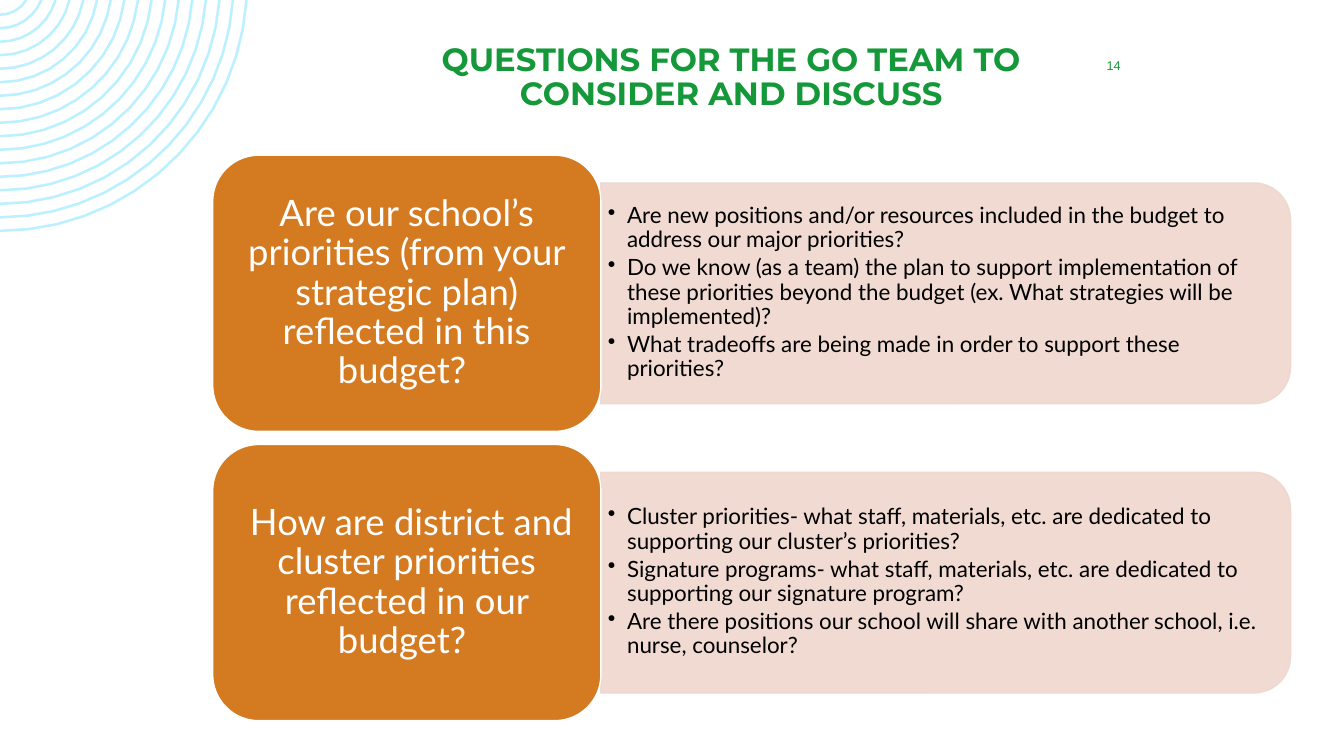
from math import asin, ceil, cos, pi, sin, sqrt

from lxml.etree import SubElement
from pptx import Presentation
from pptx.dml.color import RGBColor
from pptx.enum.shapes import MSO_SHAPE
from pptx.enum.text import MSO_ANCHOR, PP_ALIGN
from pptx.oxml.ns import qn
from pptx.util import Inches, Pt

GREEN, ORANGE, PEACH, SKY = "159839", "D47B22", "EFD7CD", "BBF0FF"
BLACK, WHITE = "000000", "FFFFFF"

SECTIONS = [
    ("Are our school’s priorities (from your strategic plan) reflected in this budget? ", [
        "Are new positions and/or resources included in the budget to address our major priorities?",
        "Do we know (as a team) the plan to support implementation of these priorities beyond "
        "the budget (ex. What strategies will be implemented)?",
        "What tradeoffs are being made in order to support these priorities?",
    ]),
    (" How are district and cluster priorities reflected in our budget? ", [
        "Cluster priorities- what staff, materials, etc. are dedicated to supporting our "
        "cluster’s priorities?",
        "Signature programs- what staff, materials, etc. are dedicated to supporting our "
        "signature program?",
        "Are there positions our school will share with another school, i.e. nurse, counselor?",
    ]),
]


def color(value):
    return RGBColor.from_string(value)


def paint(shape, fill, line, line_width=1):
    shape.shadow.inherit = False
    if fill:
        shape.fill.solid()
        shape.fill.fore_color.rgb = color(fill)
    else:
        shape.fill.background()
    shape.line.color.rgb = color(line)
    shape.line.width = Pt(line_width)


def make_translucent(shape, percent):
    for tint in shape.element.spPr.iter(qn("a:srgbClr")):
        SubElement(tint, qn("a:alpha"), val=str(percent * 1000))


def write(box, lines, font, size, text_color, align=PP_ALIGN.CENTER, anchor=MSO_ANCHOR.MIDDLE,
          spacing=0.9, bold=False):
    frame = box.text_frame
    frame.word_wrap = True
    frame.vertical_anchor = anchor
    for index, line in enumerate(lines):
        para = frame.paragraphs[0] if index == 0 else frame.add_paragraph()
        para.text = line
        para.alignment = align
        para.line_spacing = spacing
        para.font.name = font
        para.font.size = Pt(size)
        para.font.bold = bold
        para.font.color.rgb = color(text_color)


def add_text_box(page, left, top, width, height):
    return page.shapes.add_textbox(Inches(left), Inches(top), Inches(width), Inches(height))


def add_bullets(box):
    for para in box.text_frame.paragraphs:
        para.space_after = Pt(2.9)
        properties = para._p.get_or_add_pPr()
        properties.set("marL", str(Inches(0.19)))
        properties.set("indent", str(-Inches(0.19)))
        SubElement(properties, qn("a:buChar"), char="•")


def add_rings(page, count=17, outer=2.45, step=0.134, rise=0.16):
    """Draw concentric arcs centred above the top left corner, cut off at the page edges."""
    def arc(radius):
        steps = ceil(8 * sqrt(radius))
        start = asin(rise / radius)
        angles = [start + (pi / 2 - start) * i / steps for i in range(steps + 1)]
        return [(Inches(radius * cos(a)), Inches(radius * sin(a) - rise)) for a in angles]

    arcs = [arc(outer - ring * step) for ring in range(count)]
    builder = page.shapes.build_freeform(*arcs[0][0])
    builder.add_line_segments(arcs[0][1:], close=False)
    for first, *others in arcs[1:]:
        builder.move_to(*first)
        builder.add_line_segments(others, close=False)
    paint(builder.convert_to_shape(), None, SKY, 1.8)


def add_section(page, top, question, details):
    width, height = 6.84, 2.19
    # The panel is turned a quarter, so its unturned frame shares only its centre.
    center_x, center_y = 9.38, top + 1.37
    panel = page.shapes.add_shape(
        MSO_SHAPE.ROUND_2_SAME_RECTANGLE, Inches(center_x - height / 2),
        Inches(center_y - width / 2), Inches(height), Inches(width))
    panel.rotation = 90
    paint(panel, PEACH, PEACH)
    make_translucent(panel, 90)

    box = add_text_box(page, 5.96, top + 0.38, 6.74, 1.97)
    frame = box.text_frame
    frame.margin_left = frame.margin_right = Inches(0.07)
    frame.margin_top = frame.margin_bottom = Inches(0.03)
    write(box, details, "Lato", 16, BLACK, align=PP_ALIGN.LEFT)
    add_bullets(box)

    card = page.shapes.add_shape(
        MSO_SHAPE.ROUNDED_RECTANGLE, Inches(2.11), Inches(top), Inches(3.85), Inches(2.74))
    paint(card, ORANGE, WHITE)
    card.text_frame.margin_left = card.text_frame.margin_right = Inches(0.11)
    write(card, [question], "Lato", 26, WHITE)


def main():
    deck = Presentation()
    deck.slide_width, deck.slide_height = Inches(13.33), Inches(7.5)
    page = deck.slides.add_slide(deck.slide_layouts[6])
    add_rings(page)
    write(add_text_box(page, 3.47, 0.38, 7.57, 0.84),
          ["QUESTIONS FOR THE GO TEAM TO CONSIDER AND DISCUSS"],
          "Montserrat", 23, GREEN, anchor=MSO_ANCHOR.TOP, bold=True)
    write(add_text_box(page, 10.64, 0.5, 0.81, 0.3), ["14"], "Arial", 9, GREEN, spacing=1.0)
    for row, (question, details) in enumerate(SECTIONS):
        add_section(page, 1.54 + row * 2.87, question, details)
    deck.save("out.pptx")


if __name__ == "__main__":
    main()
